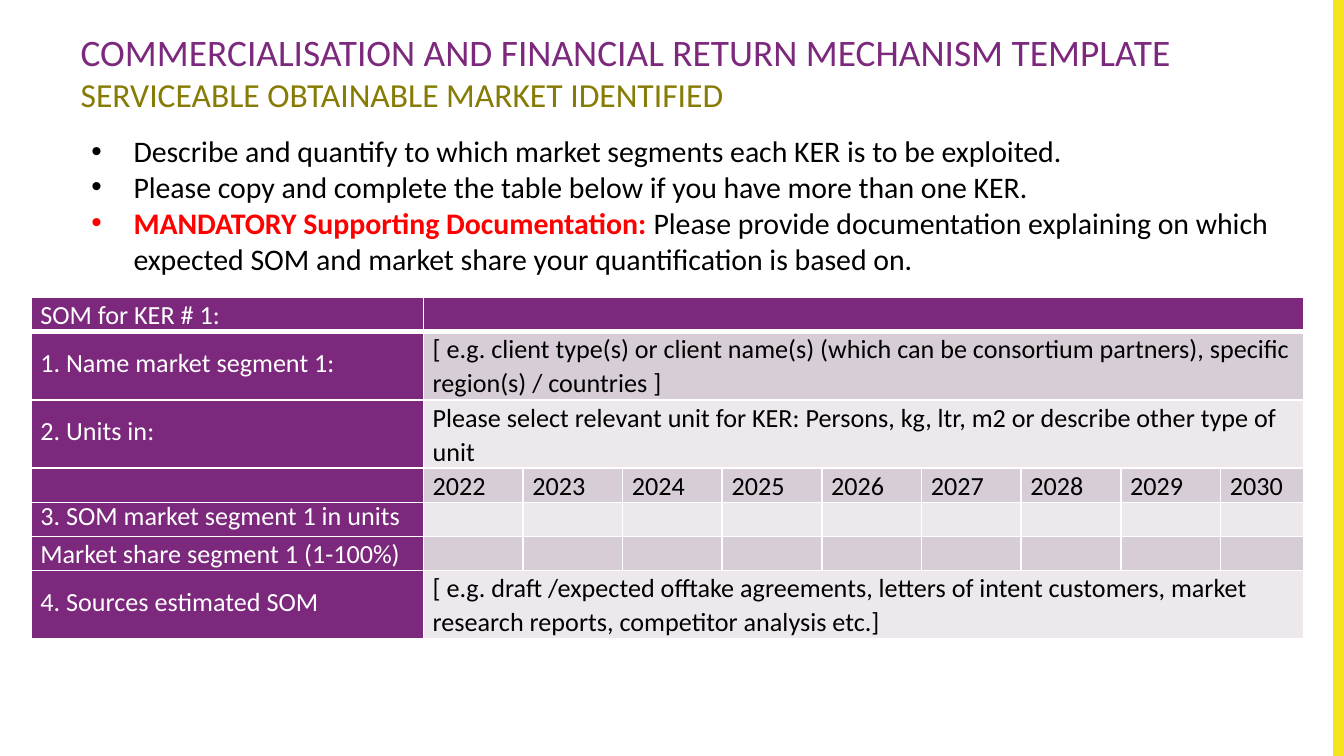
from pptx import Presentation
from pptx.dml.color import RGBColor
from pptx.enum.shapes import MSO_SHAPE
from pptx.enum.text import MSO_ANCHOR, MSO_AUTO_SIZE, PP_ALIGN
from pptx.oxml import parse_xml
from pptx.oxml.ns import nsdecls
from pptx.util import Pt

# Content
TITLE = "COMMERCIALISATION AND FINANCIAL RETURN MECHANISM TEMPLATE"
SUBTITLE = "SERVICEABLE OBTAINABLE MARKET IDENTIFIED"
BULLETS = [  # (highlighted lead, text)
    ("", "Describe and quantify to which market segments each KER is to be exploited."),
    ("", "Please copy and complete the table below if you have more than one KER."),
    ("MANDATORY Supporting Documentation: ",
     "Please provide documentation explaining on which expected SOM and market "
     "share your quantification is based on."),
]
YEARS = [str(year) for year in range(2022, 2031)]
BLANKS = [""] * len(YEARS)
ROWS = [  # (label, one merged text or a list of yearly values)
    ("SOM for KER # 1:", ""),
    ("1. Name market segment 1:",
     "[ e.g. client type(s) or client name(s) (which can be consortium partners), "
     "specific region(s) / countries ]"),
    ("2. Units in:",
     "Please select relevant unit for KER: Persons, kg, ltr, m2 or describe other type of unit"),
    ("", YEARS),
    ("3. SOM market segment 1 in units", BLANKS),
    ("Market share segment 1 (1-100%)", BLANKS),
    ("4. Sources estimated SOM",
     "[ e.g. draft /expected offtake agreements, letters of intent customers, market "
     "research reports, competitor analysis etc.]"),
]

THEME = {
    "font": "Calibri",
    "purple": "7C287D", "olive": "867B05", "yellow": "F6E421",
    "black": "000000", "white": "FFFFFF", "red": "FF0000",
    "bands": ("ECE8EC", "D7CDD7"),
    "title": 20, "subtitle": 18, "body": 16, "table": 14,
}

# Layout, in points
SLIDE = (720, 405)
BAR = (714.2, 0, 5.8, 405)
TITLE_BOX = (36, 16.6, 664, 67.6)
BODY_BOX = (41.8, 67.6, 664.6, 87.2)
TABLE_BOX = (16.6, 159.4, 682, 180.8)
COLUMNS = [210.2] + [53.4] * 8 + [44.6]
ROW_SHORT, ROW_TALL = 18.3, 36.6
BULLET_INDENT = 22.5


def place(shape, box):
    shape.left, shape.top, shape.width, shape.height = map(Pt, box)


def style(font, size, color, bold=None):
    font.name, font.size, font.bold = THEME["font"], Pt(size), bold
    font.color.rgb = RGBColor.from_string(color)


def fill(target, color):
    target.fill.solid()
    target.fill.fore_color.rgb = RGBColor.from_string(color)


def add_borders(cell, top, bottom):
    for side, width in (("L", 1), ("R", 1), ("T", top), ("B", bottom)):
        cell._tc.get_or_add_tcPr().append(parse_xml(
            f'<a:ln{side} {nsdecls("a")} w="{Pt(width)}"><a:solidFill>'
            f'<a:srgbClr val="{THEME["white"]}"/></a:solidFill></a:ln{side}>'))


def write_cell(cell, text, color, line_spacing):
    cell.margin_left = cell.margin_right = Pt(5)
    cell.margin_top = cell.margin_bottom = 0
    para = cell.text_frame.paragraphs[0]
    para.line_spacing = line_spacing
    style(para.font, THEME["table"], color)
    if text:
        para.add_run().text = text
    else:  # keeps an empty cell as low as a filled one
        para._p.append(parse_xml(
            f'<a:endParaRPr {nsdecls("a")} sz="{THEME["table"] * 100}"/>'))


deck = Presentation()
deck.slide_width, deck.slide_height = map(Pt, SLIDE)
page = deck.slides.add_slide(deck.slide_layouts[1])

# Yellow edge bar
bar = page.shapes.add_shape(MSO_SHAPE.RECTANGLE, *map(Pt, BAR))
bar.shadow.inherit = False
bar.line.fill.background()
fill(bar, THEME["yellow"])

# Title and subtitle
title = page.shapes.title
place(title, TITLE_BOX)
frame = title.text_frame
frame.auto_size = MSO_AUTO_SIZE.NONE
frame.vertical_anchor = MSO_ANCHOR.MIDDLE
frame.margin_top, frame.margin_bottom = 0, Pt(24)
para = frame.paragraphs[0]
para.alignment = PP_ALIGN.LEFT
span = para.add_run()
span.text = TITLE
style(span.font, THEME["title"], THEME["purple"])
para.add_line_break()
span = para.add_run()
span.text = SUBTITLE
style(span.font, THEME["subtitle"], THEME["olive"])

# Instructions
body = page.placeholders[1]
place(body, BODY_BOX)
frame = body.text_frame
frame.auto_size = MSO_AUTO_SIZE.NONE
for index, (lead, text) in enumerate(BULLETS):
    para = frame.add_paragraph() if index else frame.paragraphs[0]
    para.level = 1
    para.space_before = Pt(0)
    properties = para._p.get_or_add_pPr()
    properties.set("marL", str(Pt(BULLET_INDENT)))
    properties.set("indent", str(-Pt(BULLET_INDENT)))
    properties.append(parse_xml(f'<a:buFont {nsdecls("a")} typeface="Arial"/>'))
    properties.append(parse_xml(f'<a:buChar {nsdecls("a")} char="•"/>'))
    style(para.font, THEME["body"], THEME["black"])
    if lead:
        span = para.add_run()
        span.text = lead
        style(span.font, THEME["body"], THEME["red"], True)
    para.add_run().text = text

# Market table
table = page.shapes.add_table(len(ROWS), len(COLUMNS), *map(Pt, TABLE_BOX)).table
table.first_row = table.horz_banding = False
for column, width in zip(table.columns, COLUMNS):
    column.width = Pt(width)
for index, (label, content) in enumerate(ROWS):
    merged = isinstance(content, str)
    table.rows[index].height = Pt(ROW_TALL if merged and content else ROW_SHORT)
    values = [content] + BLANKS[1:] if merged else content
    band = THEME["bands"][index % 2] if index else THEME["purple"]
    for position, text in enumerate([label] + values):
        cell = table.cell(index, position)
        add_borders(cell, 3 if index == 1 else 1, 3 if index == 0 else 1)
        fill(cell, band if position else THEME["purple"])
        if position:
            write_cell(cell, text, THEME["black"], 1.07)
        else:
            numbered = label[:1].isdigit()
            write_cell(cell, text, THEME["white"], Pt(14.2) if numbered else 1.07)
            cell.vertical_anchor = MSO_ANCHOR.MIDDLE
    if merged:
        table.cell(index, 1).merge(table.cell(index, len(COLUMNS) - 1))

deck.save("out.pptx")
